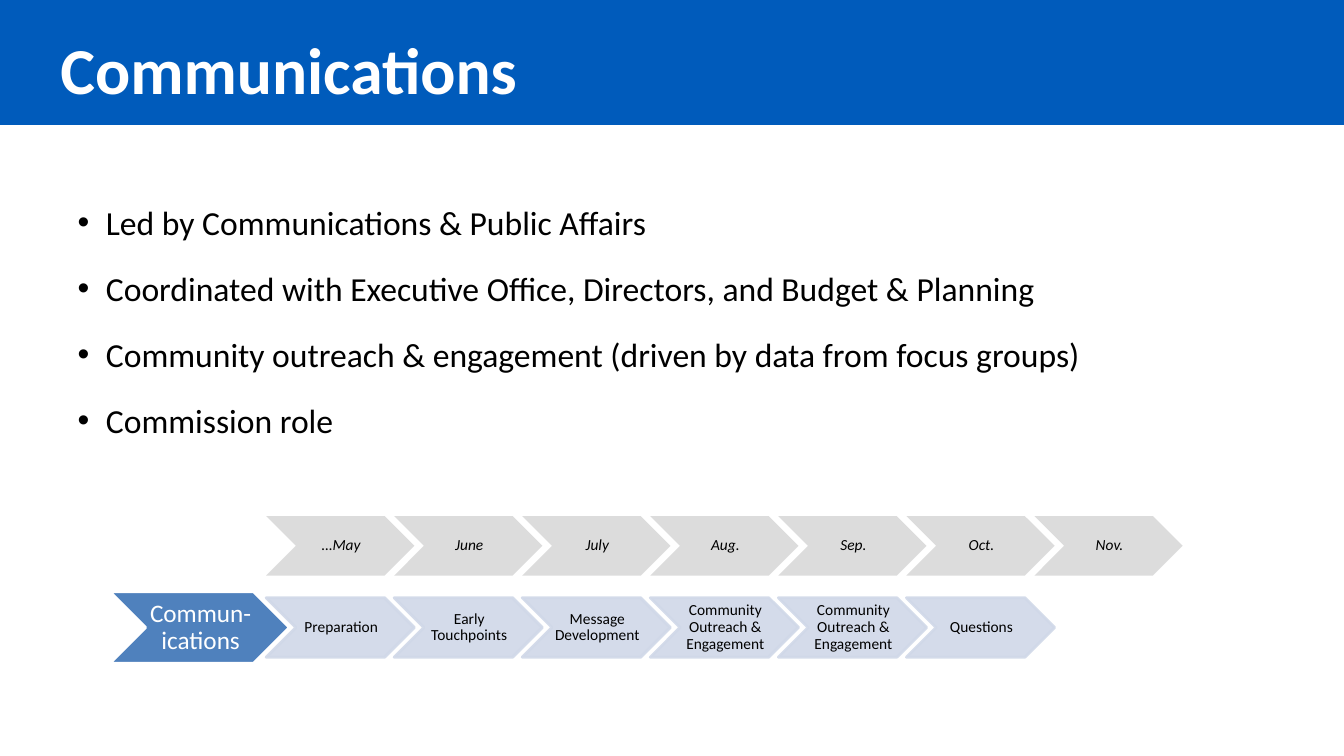
from lxml import etree
from pptx import Presentation
from pptx.dml.color import RGBColor
from pptx.enum import shapes, text
from pptx.oxml.ns import qn
from pptx.util import Inches, Pt

FONT = "Calibri"
BLUE = RGBColor(0x00, 0x5B, 0xBB)
STEEL = RGBColor(0x4F, 0x81, 0xBD)
PALE = RGBColor(0xD0, 0xD8, 0xE8)
GREY = RGBColor(0xD9, 0xD9, 0xD9)
WHITE = RGBColor(0xFF, 0xFF, 0xFF)
BLACK = RGBColor(0x00, 0x00, 0x00)

POINTS = [
    "Led by Communications & Public Affairs",
    "Coordinated with Executive Office, Directors, and Budget & Planning",
    "Community outreach & engagement (driven by data from focus groups)",
    "Commission role",
]
MONTHS = ["…May", "June", "July", "Aug.", "Sep.", "Oct.", "Nov."]
STAGES = ["Preparation", "Early Touchpoints", "Message Development",
          "Community Outreach & Engagement",
          "Community Outreach & Engagement", "Questions"]
FIRST_STEP, STEP_PITCH = 2.64, 1.27


def place(shape, left, top, width, height):
    shape.left, shape.top = Inches(left), Inches(top)
    shape.width, shape.height = Inches(width), Inches(height)


def style_font(paragraph, size, color, bold=False, italic=False):
    font = paragraph.font
    font.name, font.size = FONT, Pt(size)
    font.bold, font.italic = bold, italic
    font.color.rgb = color


def set_alpha(fill_parent, percent):
    for color in fill_parent.iter(qn("a:srgbClr")):
        etree.SubElement(color, qn("a:alpha")).set("val", str(percent * 1000))


def add_band(slide):
    band = slide.shapes.add_shape(shapes.MSO_SHAPE.RECTANGLE, 0,
                                  Inches(-0.01), Inches(13.33), Inches(1.25))
    band.shadow.inherit = False
    band.fill.solid()
    band.fill.fore_color.rgb = BLUE
    band.line.fill.background()
    slide.shapes._spTree.insert(2, band._element)  # behind the title


def fill_title(title, words):
    place(title, 0.5, 0.24, 12.67, 1)
    frame = title.text_frame
    frame.text = words
    frame.auto_size = text.MSO_AUTO_SIZE.NONE
    frame.vertical_anchor = text.MSO_ANCHOR.TOP
    heading = frame.paragraphs[0]
    heading.alignment = text.PP_ALIGN.LEFT
    style_font(heading, 46.8, WHITE, bold=True)


def fill_list(body, points):
    place(body, 0.67, 1.75, 12.05, 2.81)
    frame = body.text_frame
    frame.text = "\n".join(points)
    frame.auto_size = text.MSO_AUTO_SIZE.NONE
    frame.vertical_anchor = text.MSO_ANCHOR.TOP
    for index, point in enumerate(frame.paragraphs):
        point.line_spacing = 1.5
        point.space_before = Pt(4 if index else 0)
        properties = point._p.get_or_add_pPr()
        properties.set("marL", str(Inches(0.28)))
        properties.set("indent", str(Inches(-0.28)))
        etree.SubElement(properties, qn("a:buChar")).set("char", "•")
        style_font(point, 24, BLACK)


def add_chevron(slide, label, box, fill, line=None, size=11, color=BLACK,
                italic=False, opacity=100):
    chevron = slide.shapes.add_shape(shapes.MSO_SHAPE.CHEVRON,
                                     *[Inches(length) for length in box])
    chevron.shadow.inherit = False
    chevron.fill.solid()
    chevron.fill.fore_color.rgb = fill
    if line is None:
        chevron.line.fill.background()
    else:
        chevron.line.color.rgb = line
        chevron.line.width = Pt(2)
    if opacity < 100:
        set_alpha(chevron._element.spPr, opacity)

    frame = chevron.text_frame
    frame.word_wrap = True
    frame.vertical_anchor = text.MSO_ANCHOR.MIDDLE
    frame.margin_left, frame.margin_right = Inches(0.02), 0
    frame.margin_top = frame.margin_bottom = Inches(0.01)
    frame.text = label
    caption = frame.paragraphs[0]
    caption.alignment = text.PP_ALIGN.CENTER
    caption.line_spacing = 0.9
    style_font(caption, size, color, italic=italic)


def add_steps(slide, labels, top, fill, **style):
    for index, label in enumerate(labels):
        box = (FIRST_STEP + index * STEP_PITCH, top, 1.47, 0.59)
        add_chevron(slide, label, box, fill, opacity=90, **style)


def main():
    deck = Presentation()
    deck.slide_width, deck.slide_height = Inches(13.33), Inches(7.5)
    slide = deck.slides.add_slide(deck.slide_layouts[1])

    # Heading and list
    add_band(slide)
    fill_title(slide.shapes.title, "Communications")
    fill_list(slide.placeholders[1], POINTS)

    # Timeline
    add_steps(slide, MONTHS, 5.12, GREY, italic=True)
    add_chevron(slide, "Commun-\vications", (1.09, 5.87, 1.78, 0.71), STEEL,
                line=WHITE, size=18, color=WHITE)
    add_steps(slide, STAGES, 5.93, PALE, line=PALE)

    deck.save("out.pptx")


if __name__ == "__main__":
    main()
